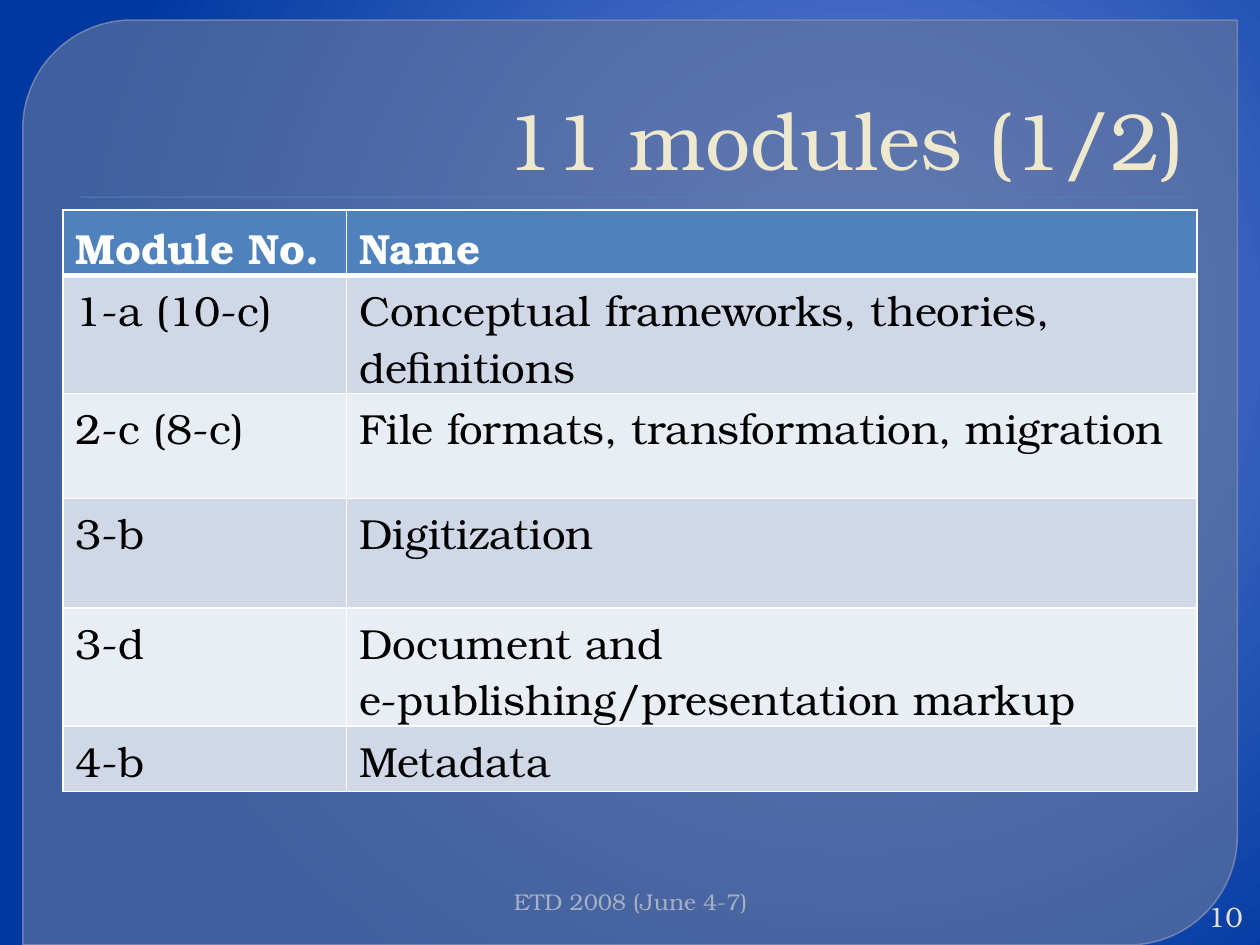
"""Build the slide that lists the first half of the 11 modules."""
from dataclasses import dataclass

from lxml.etree import SubElement as Sub
from pptx import Presentation
from pptx.dml.color import RGBColor as RGB
from pptx.enum.shapes import MSO_SHAPE as SHAPE
from pptx.enum.text import MSO_ANCHOR as ANCHOR, PP_ALIGN as ALIGN
from pptx.oxml.ns import qn
from pptx.util import Pt


@dataclass(frozen=True)
class Theme:
    font: str = "TeX Gyre Bonum"
    title_size: int = 46
    table_size: int = 24
    footer_size: int = 13
    number_size: int = 16
    title: str = "EDE8CE"
    footer: str = "A7AFC5"
    number: str = "E3E1D7"
    panel: str = "63759D"
    panel_line: str = "7989B3"
    accent: str = "4F81BD"
    white: str = "FFFFFF"
    black: str = "000000"
    bands: tuple = ("D0D8E8", "E9EDF4")
    backdrop: tuple = ((0, "6182D6"), (20, "5578CE"), (100, "0038A1"))


THEME = Theme()
COL_WIDTHS = (162, 486)
ROW_HEIGHTS = (37.5, 67.5, 60, 62.5, 67.5, 37.5)
ROWS = (
    ("Module No.", "Name"),
    ("1-a (10-c)", "Conceptual frameworks, theories, definitions"),
    ("2-c (8-c)", "File formats, transformation, migration"),
    ("3-b", "Digitization"),
    ("3-d", "Document and e-publishing/presentation markup"),
    ("4-b", "Metadata"),
)


def set_backdrop(s):
    s.background.fill.gradient()
    grad = next(s._element.iter(qn("a:gradFill")))
    for child in list(grad):
        grad.remove(child)
    stops = Sub(grad, qn("a:gsLst"))
    for pos, color in THEME.backdrop:
        stop = Sub(stops, qn("a:gs"), pos=str(pos * 1000))
        Sub(stop, qn("a:srgbClr"), val=color)
    centre = Sub(grad, qn("a:path"), path="circle")
    Sub(centre, qn("a:fillToRect"), l="68000", t="35000", r="32000", b="65000")


def set_opacity(fill, percent):
    color = next(fill._xPr.iter(qn("a:srgbClr")))
    Sub(color, qn("a:alpha"), val=str(percent * 1000))


def add_box(s, kind, box, color):
    sp = s.shapes.add_shape(kind, *map(Pt, box))
    sp.shadow.inherit = False
    sp.fill.solid()
    sp.fill.fore_color.rgb = RGB.from_string(color)
    sp.line.fill.background()
    return sp


def add_panel(s):
    sp = add_box(s, SHAPE.ROUND_2_DIAG_RECTANGLE, (13, 11.5, 694, 528.5), THEME.panel)
    sp.adjustments[0] = 0.118
    sp.adjustments[1] = 0
    set_opacity(sp.fill, 65)
    sp.line.width = Pt(0.87)
    sp.line.color.rgb = RGB.from_string(THEME.panel_line)
    set_opacity(sp.line.fill, 88)


def write(tf, text, size, color, bold=False, align=ALIGN.LEFT):
    tf.text = text
    tf.word_wrap = True
    p = tf.paragraphs[0]
    p.alignment = align
    font = p.runs[0].font
    font.name, font.size, font.bold = THEME.font, Pt(size), bold
    font.color.rgb = RGB.from_string(color)


def add_label(s, text, box, size, color, anchor):
    tf = s.shapes.add_textbox(*map(Pt, box)).text_frame
    write(tf, text, size, color, align=ALIGN.RIGHT)
    tf.vertical_anchor = anchor


def set_borders(cell, bottom):
    tc_pr = cell._tc.get_or_add_tcPr()
    widths = (("lnL", 1), ("lnR", 1), ("lnT", 1), ("lnB", bottom))
    for i, (side, width) in enumerate(widths):
        ln = tc_pr.makeelement(qn(f"a:{side}"), {"w": str(Pt(width))})
        Sub(Sub(ln, qn("a:solidFill")), qn("a:srgbClr"), val=THEME.white)
        tc_pr.insert(i, ln)


def add_modules(s):
    box = (36, 120, sum(COL_WIDTHS), sum(ROW_HEIGHTS))
    table = s.shapes.add_table(len(ROWS), len(COL_WIDTHS), *map(Pt, box)).table
    for col, width in zip(table.columns, COL_WIDTHS):
        col.width = Pt(width)
    for i, (row, height, texts) in enumerate(zip(table.rows, ROW_HEIGHTS, ROWS)):
        row.height = Pt(height)
        header = i == 0
        fill = THEME.accent if header else THEME.bands[(i - 1) % 2]
        color = THEME.white if header else THEME.black
        for cell, text in zip(row.cells, texts):
            write(cell.text_frame, text, THEME.table_size, color, bold=header)
            cell.fill.solid()
            cell.fill.fore_color.rgb = RGB.from_string(fill)
            set_borders(cell, bottom=3 if header else 1)


def main():
    prs = Presentation()
    prs.slide_width, prs.slide_height = Pt(720), Pt(540)
    s = prs.slides.add_slide(prs.slide_layouts[6])
    set_backdrop(s)
    add_panel(s)
    add_box(s, SHAPE.RECTANGLE, (46, 112.3, 630, 0.7), THEME.accent)
    add_label(s, "11 modules (1/2)", (36, 20, 648, 90),
              THEME.title_size, THEME.title, ANCHOR.BOTTOM)
    add_modules(s)
    add_label(s, "ETD 2008 (June 4-7)", (102, 504, 332, 21.6),
              THEME.footer_size, THEME.footer, ANCHOR.TOP)
    add_label(s, "10", (680.4, 512.6, 36.7, 21.6),
              THEME.number_size, THEME.number, ANCHOR.MIDDLE)
    prs.save("out.pptx")


if __name__ == "__main__":
    main()
